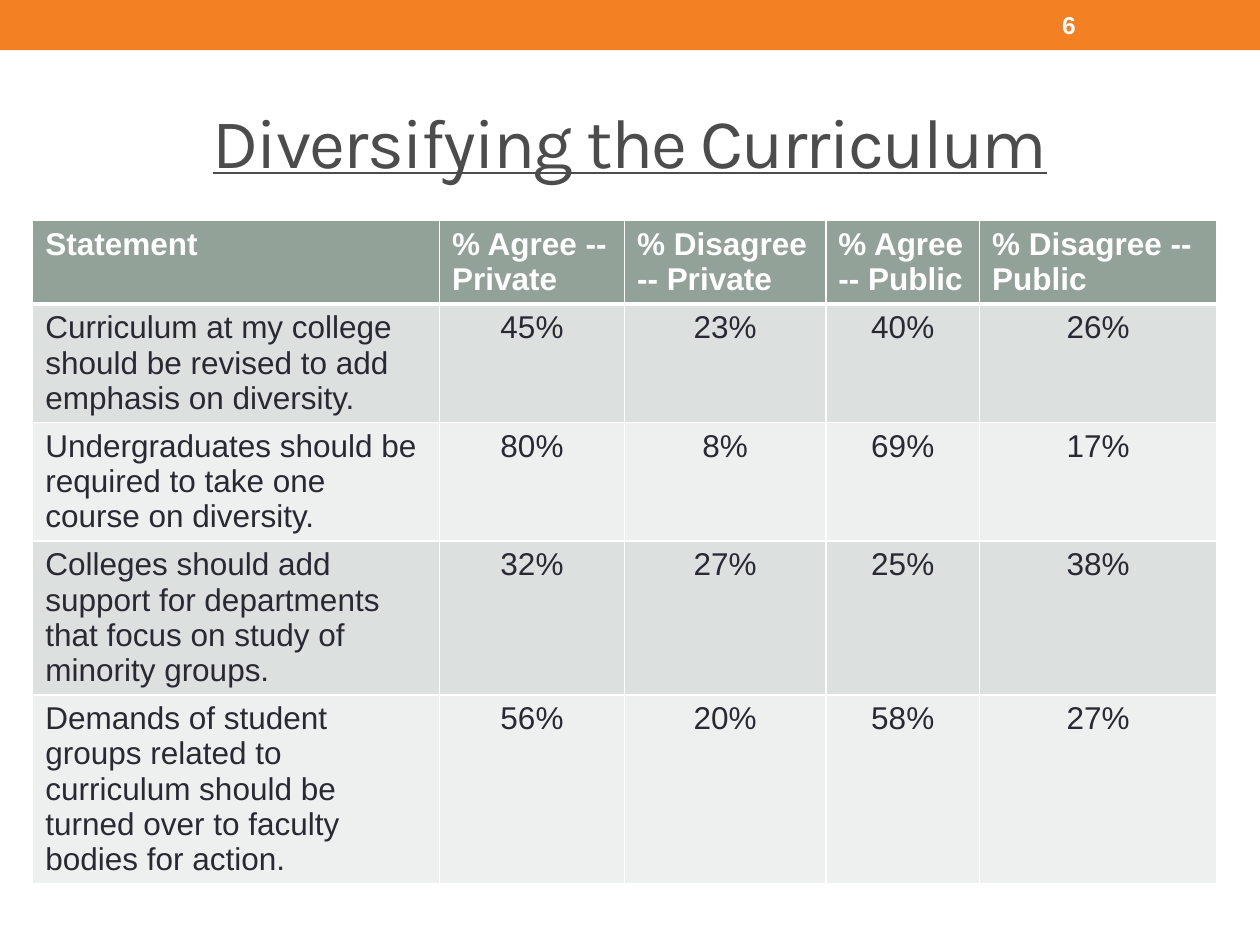
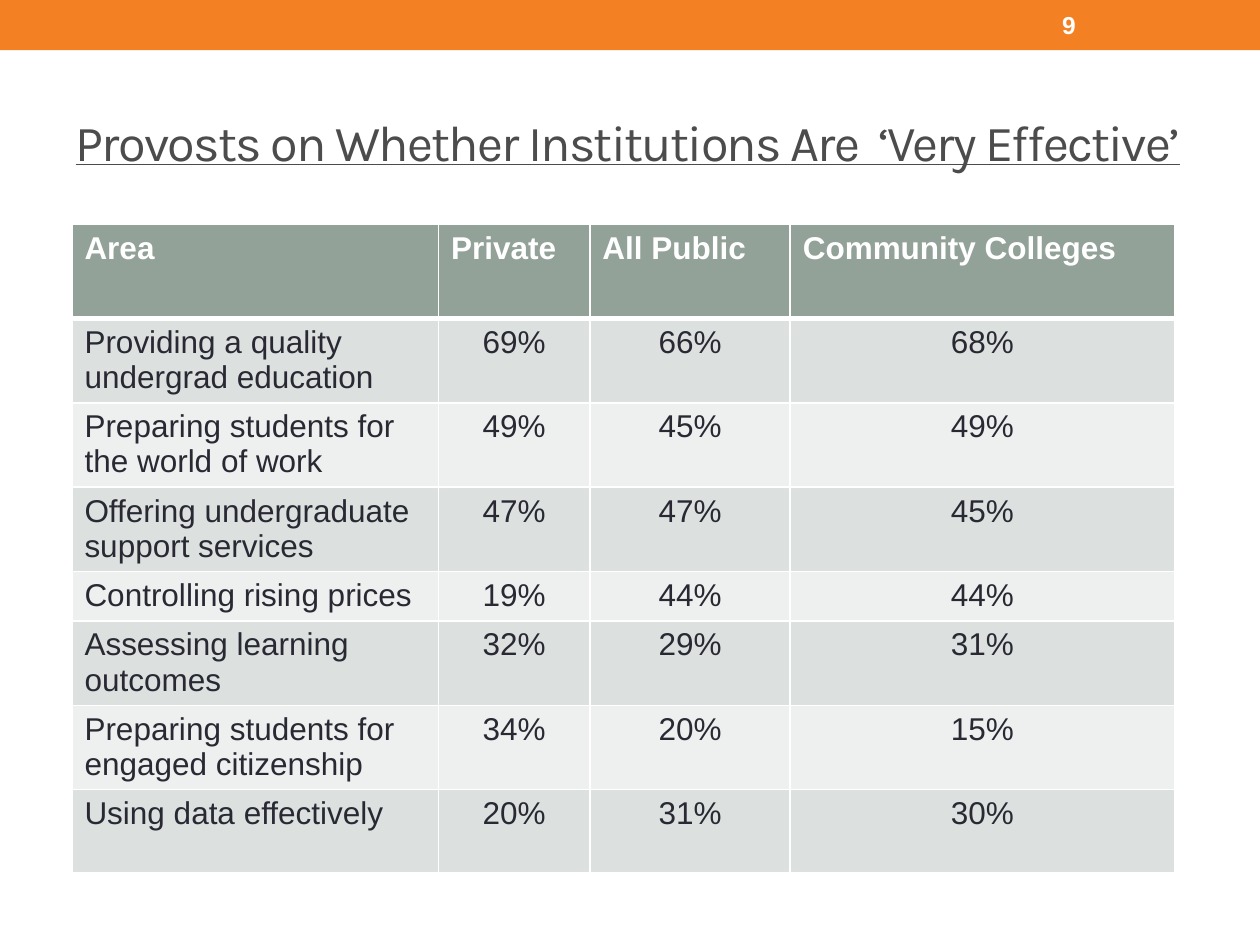
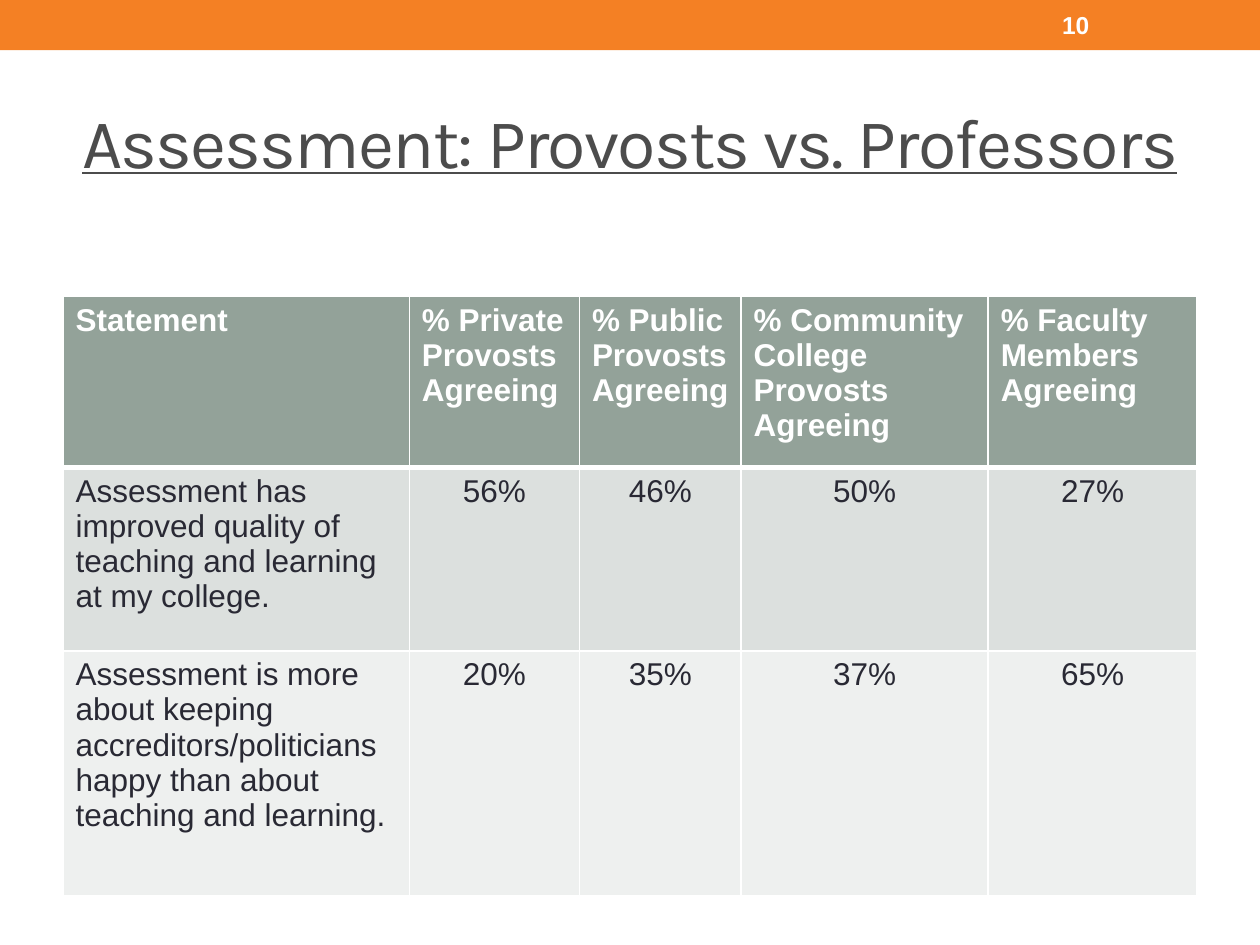
from dataclasses import dataclass
from functools import reduce
from typing import Any

from lxml.etree import SubElement
from pptx import Presentation
from pptx.dml.color import RGBColor
from pptx.enum.shapes import MSO_SHAPE
from pptx.enum.text import MSO_ANCHOR, MSO_AUTO_SIZE, PP_ALIGN
from pptx.oxml.ns import qn
from pptx.util import Cm, Pt


@dataclass(frozen=True)
class Theme:
    band: RGBColor = RGBColor(0xF4, 0x80, 0x24)
    title: RGBColor = RGBColor(0x4C, 0x4C, 0x4C)
    head: RGBColor = RGBColor(0x93, 0xA2, 0x99)
    odd: RGBColor = RGBColor(0xDC, 0xE0, 0xDE)
    even: RGBColor = RGBColor(0xEE, 0xF0, 0xEF)
    ink: RGBColor = RGBColor(0x29, 0x29, 0x34)
    white: RGBColor = RGBColor(0xFF, 0xFF, 0xFF)
    title_font: str = "Karla"
    text_font: str = "Arial"
    big: float = 40
    small: float = 28.8
    text: float = 18
    page: float = 14
    thin: float = 1
    thick: float = 3


THEME = Theme()


@dataclass(frozen=True)
class Grid:
    left: float
    top: float
    cols: list[float]
    rows: list[float]
    cells: list[list[str]]


@dataclass(frozen=True)
class Page:
    number: int
    title: str
    size: float
    align: PP_ALIGN
    grid: Grid


PAGES = [
    Page(6, "Diversifying the Curriculum", THEME.big, PP_ALIGN.CENTER, Grid(
        0.66, 4.45, [8.2, 3.73, 4.06, 3.1, 4.78], [1.65, 2.39, 2.39, 3.1, 3.79],
        [
            ["Statement", "% Agree -- Private", "% Disagree -- Private",
             "% Agree -- Public", "% Disagree -- Public"],
            ["Curriculum at my college should be revised to add emphasis on diversity.",
             "45%", "23%", "40%", "26%"],
            ["Undergraduates should be required to take one course on diversity.",
             "80%", "8%", "69%", "17%"],
            ["Colleges should add support for departments that focus on study of "
             "minority groups.", "32%", "27%", "25%", "38%"],
            ["Demands of student groups related to curriculum should be turned over "
             "to faculty bodies for action.", "56%", "20%", "58%", "27%"],
        ])),
    Page(9, "Provosts on Whether Institutions Are  ‘Very Effective’",
         THEME.small, PP_ALIGN.LEFT, Grid(
        1.45, 4.52, [7.39, 3.05, 4.04, 7.75],
        [1.9, 1.7, 1.7, 1.7, 1, 1.7, 1.7, 1.68],
        [
            ["Area", "Private", "All Public", "Community Colleges"],
            ["Providing a quality undergrad education", "69%", "66%", "68%"],
            ["Preparing students for the world of work", "49%", "45%", "49%"],
            ["Offering undergraduate support services", "47%", "47%", "45%"],
            ["Controlling rising prices", "19%", "44%", "44%"],
            ["Assessing learning outcomes", "32%", "29%", "31%"],
            ["Preparing students for engaged citizenship", "34%", "20%", "15%"],
            ["Using data effectively", "20%", "31%", "30%"],
        ])),
    Page(10, "Assessment: Provosts vs. Professors", THEME.big, PP_ALIGN.CENTER, Grid(
        1.27, 5.97, [6.98, 3.43, 3.26, 4.98, 4.21], [3.45, 3.7, 4.93],
        [
            ["Statement", "% Private Provosts Agreeing", "% Public Provosts Agreeing",
             "% Community College Provosts Agreeing", "% Faculty Members Agreeing"],
            ["Assessment has improved quality of teaching and learning at my college.",
             "56%", "46%", "50%", "27%"],
            ["Assessment is more about keeping accreditors/politicians happy than "
             "about teaching and learning.", "20%", "35%", "37%", "65%"],
        ])),
]


def style(item: Any, form: dict[str, Any]) -> None:
    for key, value in form.items():
        *steps, last = key.split(".")
        setattr(reduce(getattr, steps, item), last, value)


def write(frame: Any, text: str, align: PP_ALIGN, form: dict[str, Any]) -> None:
    line = frame.paragraphs[0]
    line.alignment = align
    run = line.add_run()
    run.text = text
    style(run.font, form)


def text_form(size: float, color: RGBColor, bold: bool) -> dict[str, Any]:
    return {"name": THEME.text_font, "size": Pt(size), "bold": bold, "color.rgb": color}


def add_band(slide: Any, deck: Any) -> None:
    band = slide.shapes.add_shape(MSO_SHAPE.RECTANGLE, 0, 0, deck.slide_width, Cm(1.01))
    band.fill.solid()
    style(band, {"fill.fore_color.rgb": THEME.band, "shadow.inherit": False})
    band.line.fill.background()
    slide.slide_layout.shapes.element.insert(2, band.element)


def add_title(slide: Any, page: Page) -> None:
    title = slide.shapes.title
    style(title, {"left": Cm(1.27), "top": Cm(1.47), "width": Cm(22.86), "height": Cm(2.74)})
    frame = title.text_frame
    style(frame, {"auto_size": MSO_AUTO_SIZE.NONE, "word_wrap": True,
                  "vertical_anchor": MSO_ANCHOR.MIDDLE})
    write(frame, page.title, page.align, {
        "name": THEME.title_font, "size": Pt(page.size), "bold": False,
        "underline": True, "color.rgb": THEME.title})
    for props in title.element.iter(qn("a:rPr")):
        props.set("spc", "-100")


def add_number(slide: Any, number: int) -> None:
    box = slide.shapes.add_textbox(Cm(21.16), Cm(0.05), Cm(2.97), Cm(0.91))
    style(box.text_frame, {"word_wrap": True, "vertical_anchor": MSO_ANCHOR.MIDDLE})
    write(box.text_frame, str(number), PP_ALIGN.LEFT,
          text_form(THEME.page, THEME.white, True))


def add_edges(cell: Any, row: int) -> None:
    props = cell.fill and cell._tc.get_or_add_tcPr()
    widths = {"L": THEME.thin, "R": THEME.thin,
              "T": THEME.thick if row == 1 else THEME.thin,
              "B": THEME.thick if row == 0 else THEME.thin}
    for spot, (side, width) in enumerate(widths.items()):
        edge = SubElement(props, qn(f"a:ln{side}"), w=str(Pt(width)))
        fill = SubElement(edge, qn("a:solidFill"))
        SubElement(fill, qn("a:srgbClr"), val=str(THEME.white))
        props.insert(spot, edge)


def add_grid(slide: Any, grid: Grid) -> None:
    table = slide.shapes.add_table(
        len(grid.rows), len(grid.cols), Cm(grid.left), Cm(grid.top),
        Cm(sum(grid.cols)), Cm(sum(grid.rows))).table
    table.horz_banding = False
    for col, width in zip(table.columns, grid.cols):
        col.width = Cm(width)
    for row, height in zip(table.rows, grid.rows):
        row.height = Cm(height)
    for y, texts in enumerate(grid.cells):
        head = y == 0
        color = THEME.head if head else THEME.odd if y % 2 else THEME.even
        form = text_form(THEME.text, THEME.white if head else THEME.ink, head)
        for x, text in enumerate(texts):
            cell = table.cell(y, x)
            cell.fill.solid()
            cell.fill.fore_color.rgb = color
            align = PP_ALIGN.LEFT if head or x == 0 else PP_ALIGN.CENTER
            write(cell.text_frame, text, align, form)
            add_edges(cell, y)


def main() -> None:
    deck = Presentation()
    style(deck, {"slide_width": Cm(25.4), "slide_height": Cm(19.05)})
    for page in PAGES:
        slide = deck.slides.add_slide(deck.slide_layouts[5])
        if page is PAGES[0]:
            add_band(slide, deck)
        add_title(slide, page)
        add_grid(slide, page.grid)
        add_number(slide, page.number)
    deck.save("out.pptx")


if __name__ == "__main__":
    main()
